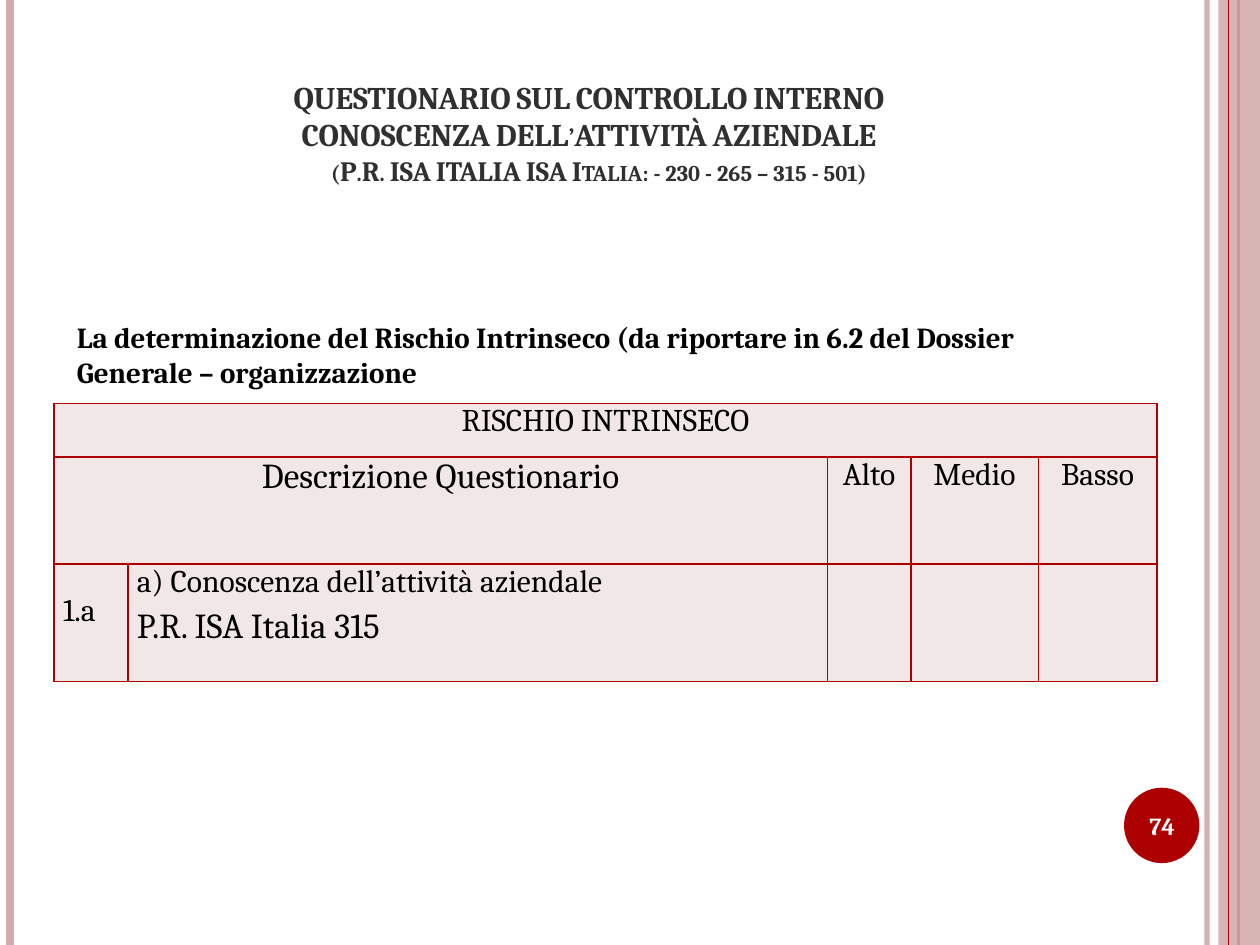
from lxml import etree
from pptx import Presentation
from pptx import util as u
from pptx.dml.color import RGBColor
from pptx.enum import shapes, text
from pptx.oxml import parse_xml
from pptx.oxml.ns import qn

COLORS = {"red": "AD0101", "pink": "D3ABAB", "cell": "F1E7E7",
          "title": "303030", "black": "000000", "white": "FFFFFF"}
NS = "http://schemas.openxmlformats.org/drawingml/2006/main"
CENTER, LEFT = text.PP_ALIGN.CENTER, text.PP_ALIGN.LEFT
TOP, MIDDLE, BOTTOM = (text.MSO_ANCHOR.TOP, text.MSO_ANCHOR.MIDDLE,
                       text.MSO_ANCHOR.BOTTOM)
HEIGHT = 19.05


def rgb(name):
    return RGBColor.from_string(COLORS[name])


def set_alpha(fill_parent, percent):
    color = fill_parent.find(f".//{qn('a:solidFill')}/{qn('a:srgbClr')}")
    etree.SubElement(color, qn("a:alpha")).set("val", str(percent * 1000))


class Deck:
    font = "Cambria"

    def __init__(self):
        self.prs = Presentation()
        self.prs.slide_width, self.prs.slide_height = u.Cm(25.4), u.Cm(HEIGHT)
        self.s = self.prs.slides.add_slide(self.prs.slide_layouts[6])

    def stripe(self, x, color, width, alpha=100):
        """Full-height vertical line."""
        c = self.s.shapes.add_connector(shapes.MSO_CONNECTOR.STRAIGHT,
                                        u.Cm(x), 0, u.Cm(x), u.Cm(HEIGHT))
        c.line.color.rgb, c.line.width = rgb(color), u.Pt(width)
        sp_pr = c._element.spPr
        if alpha < 100:
            set_alpha(sp_pr, alpha)
        etree.SubElement(sp_pr, qn("a:effectLst"))

    def shape(self, kind, box, color, alpha=100):
        sp = self.s.shapes.add_shape(kind, *map(u.Cm, box))
        sp.shadow.inherit = False
        sp.fill.solid()
        sp.fill.fore_color.rgb = rgb(color)
        sp.line.fill.background()
        if alpha < 100:
            set_alpha(sp._element.spPr, alpha)

    def fill_text(self, tf, lines, color="black", bold=False, align=LEFT):
        """Fill a text frame with (text, size) lines, one paragraph each."""
        tf.word_wrap = True
        for i, (words, size) in enumerate(lines):
            p = tf.paragraphs[0] if i == 0 else tf.add_paragraph()
            p.text, p.alignment = words, align
            f = p.font
            f.name, f.size, f.bold = self.font, u.Pt(size), bold
            f.color.rgb = rgb(color)

    def text(self, box, lines, anchor=TOP, **style):
        tf = self.s.shapes.add_textbox(*map(u.Cm, box)).text_frame
        tf.vertical_anchor = anchor
        self.fill_text(tf, lines, **style)
        return tf

    def table(self, x, y, cols, rows):
        t = self.s.shapes.add_table(len(rows), len(cols), u.Cm(x), u.Cm(y),
                                    u.Cm(sum(cols)), u.Cm(sum(rows))).table
        t.first_row = t.horz_banding = False
        for col, width in zip(t.columns, cols):
            col.width = u.Cm(width)
        for row, height in zip(t.rows, rows):
            row.height = u.Cm(height)
        for cell in t.iter_cells():
            cell.fill.solid()
            cell.fill.fore_color.rgb = rgb("cell")
            cell.margin_left = cell.margin_right = u.Cm(0.18)
            cell.margin_top = cell.margin_bottom = 0
            self.border(cell)
        return t

    def border(self, cell):
        for i, side in enumerate("LRTB"):
            cell._tc.get_or_add_tcPr().insert(i, parse_xml(
                f'<a:ln{side} xmlns:a="{NS}" w="12700"><a:solidFill>'
                f'<a:srgbClr val="{COLORS["red"]}"/></a:solidFill></a:ln{side}>'))


def main():
    d = Deck()
    d.stripe(24.33, "pink", 3, alpha=93)
    d.stripe(0.2, "pink", 4.5)
    d.stripe(24.97, "red", 1.5)
    d.shape(shapes.MSO_SHAPE.RECTANGLE, (24.56, 0, 0.84, HEIGHT), "pink", alpha=87)
    d.stripe(24.77, "red", 0.75)
    d.shape(shapes.MSO_SHAPE.OVAL, (22.66, 15.88, 1.52, 1.52), "red")

    title = d.text((1.5, 1.32, 20.75, 2.57),
                   [("QUESTIONARIO SUL CONTROLLO INTERNO", 18),
                    ("CONOSCENZA DELL’ATTIVITÀ AZIENDALE", 18),
                    ("(P.R. ISA ITALIA ISA Italia: - 230 - 265 – 315 - 501)", 16)],
                   anchor=BOTTOM, color="title", bold=True, align=CENTER)
    for p in title.paragraphs:
        p.font._element.set("cap", "small")
    title.paragraphs[-1]._p.get_or_add_pPr().set("marL", str(u.Cm(0.4)))

    d.text((1.3, 6.32, 20.75, 1.6),
           [("La determinazione del Rischio Intrinseco (da riportare in 6.2 "
             "del Dossier Generale – organizzazione", 16.6)], bold=True)
    d.text((22.58, 15.93, 1.7, 1.45), [("74", 14)], anchor=MIDDLE,
           color="white", bold=True, align=CENTER)

    t = d.table(1.09, 8.13, cols=(1.49, 14.1, 1.68, 2.57, 2.39),
                rows=(1.08, 2.16, 2.37))
    t.cell(0, 0).merge(t.cell(0, 4))
    t.cell(1, 0).merge(t.cell(1, 1))
    headings = {(0, 0): ("RISCHIO INTRINSECO", 18),
                (1, 0): ("Descrizione Questionario", 20),
                (1, 2): ("Alto", 18), (1, 3): ("Medio", 18), (1, 4): ("Basso", 18)}
    for place, line in headings.items():
        d.fill_text(t.cell(*place).text_frame, [line], align=CENTER)
    t.cell(2, 0).margin_top = u.Cm(0.58)
    d.fill_text(t.cell(2, 0).text_frame, [("1.a", 18)])
    item = t.cell(2, 1).text_frame
    d.fill_text(item, [("a) Conoscenza dell’attività aziendale", 18),
                       ("P.R. ISA Italia 315", 20)])
    item.paragraphs[0].space_before = item.paragraphs[0].space_after = u.Pt(4)
    d.prs.save("out.pptx")


if __name__ == "__main__":
    main()
